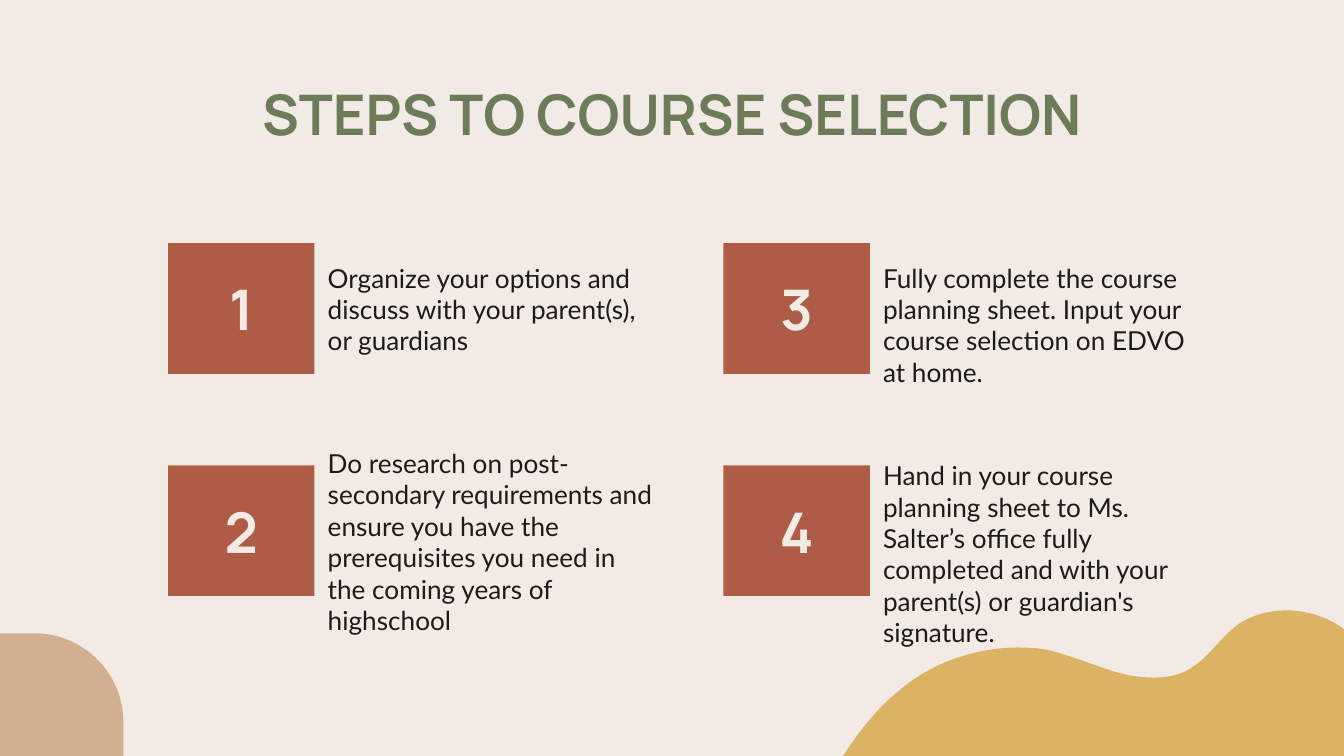
from pptx import Presentation
from pptx.dml.color import RGBColor
from pptx.enum.shapes import MSO_SHAPE
from pptx.enum.text import MSO_ANCHOR, PP_ALIGN
from pptx.oxml.ns import qn
from pptx.util import Pt

CREAM = RGBColor(0xF1, 0xEA, 0xE5)
TAN = RGBColor(0xD3, 0xAF, 0x92)
GOLD = RGBColor(0xDC, 0xB3, 0x64)
GREEN = RGBColor(0x6E, 0x7B, 0x59)
RUST = RGBColor(0xAF, 0x5C, 0x46)
INK = RGBColor(0x1F, 0x19, 0x1A)

RECT = MSO_SHAPE.RECTANGLE
TOP, MIDDLE = MSO_ANCHOR.TOP, MSO_ANCHOR.MIDDLE
LEFT, CENTER = PP_ALIGN.LEFT, PP_ALIGN.CENTER

HEADING = {"name": "Manrope", "size": Pt(30), "bold": True}
BODY = {"name": "Lato", "size": Pt(14), "bold": False}

STEPS = [
    ("1", "Organize your options and discuss with your parent(s), or guardians",
     2.9, 39.6),
    ("2", "Do research on post-secondary requirements and ensure you have the "
          "prerequisites you need in the coming years of highschool", -16.8, 147.6),
    ("3", "Fully complete the course planning sheet. Input your course selection "
          "on EDVO at home.", 2.9, 39.6),
    ("4", "Hand in your course planning sheet to Ms. Salter’s office fully completed "
          "and with your parent(s) or guardian's signature.", -10.3, 39.6),
]

WAVE_CURVES = [
    ((11, 65.5), (24.5, 48), (44, 35.3)),
    ((59, 25.7), (78.5, 19.9), (97.2, 19.9)),
    ((103, 19.9), (108.7, 20.2), (113.8, 21.3)),
    ((126, 24.3), (137.5, 29.3), (149.8, 33)),
    ((156.2, 35), (163.4, 36), (170, 36)),
    ((176.4, 36), (182.2, 35), (187.2, 32.6)),
    ((198.7, 26.6), (204.5, 15.8), (214.6, 8)),
    ((221.8, 2.9), (231, 0), (241.2, 0)),
    ((255, 0), (269.3, 5.8), (277.2, 15)),
]


def style_shape(sp, color):
    sp.shadow.inherit = False
    sp.fill.solid()
    sp.fill.fore_color.rgb = color
    sp.line.fill.background()


def add_outline(slide, left, top, start, segments, color):
    builder = slide.shapes.build_freeform(Pt(start[0]), Pt(start[1]))
    builder.add_line_segments(
        [(Pt(x), Pt(y)) for segment in segments for x, y in segment], close=True)
    sp = builder.convert_to_shape(Pt(left), Pt(top))
    style_shape(sp, color)
    lines = iter(list(sp._element.iter(qn("a:lnTo"))))
    for segment in segments:
        first, *others = [next(lines) for _ in segment]
        if others:
            first.tag = qn("a:cubicBezTo")
            for line in others:
                first.append(line[0])
                line.getparent().remove(line)


def write(sp, text, font, color, align, anchor):
    tf = sp.text_frame
    frame = {"word_wrap": True, "vertical_anchor": anchor}
    frame.update({f"margin_{side}": Pt(7.2) for side in ("left", "top", "right", "bottom")})
    for name, value in frame.items():
        setattr(tf, name, value)
    p = tf.paragraphs[0]
    p.alignment = align
    r = p.add_run()
    r.text = text
    for name, value in font.items():
        setattr(r.font, name, value)
    r.font.color.rgb = color


def add_corner(slide, left, top, size, radius):
    flat = size - radius
    bend = radius * 0.45
    arc = ((size - bend, 0), (size, bend), (size, radius))
    segments = [((flat, 0),), arc, ((size, size),), ((0, size),)]
    add_outline(slide, left, top, (0, 0), segments, TAN)


def add_wave(slide, left, top):
    add_outline(slide, left, top, (0, 84), WAVE_CURVES + [((275, 84),)], GOLD)


def add_title(slide, left, top, width, height):
    box = slide.shapes.add_textbox(Pt(left), Pt(top), Pt(width), Pt(height))
    write(box, "STEPS TO COURSE SELECTION", HEADING, GREEN, CENTER, TOP)


def add_step(slide, left, top, number, text, text_shift, text_height):
    width, height = 78.5, 70
    box = slide.shapes.add_textbox(
        Pt(left + width), Pt(top + text_shift), Pt(190), Pt(text_height))
    write(box, text, BODY, INK, LEFT, TOP)
    tile = slide.shapes.add_shape(RECT, Pt(left), Pt(top), Pt(width), Pt(height))
    style_shape(tile, RUST)
    write(tile, number, HEADING, CREAM, CENTER, MIDDLE)


def add_steps(slide, left, top, column_step, row_step):
    for i, step in enumerate(STEPS):
        column, row = divmod(i, 2)
        add_step(slide, left + column * column_step, top + row * row_step, *step)


def main():
    prs = Presentation()
    prs.slide_width, prs.slide_height = Pt(720), Pt(405)
    slide = prs.slides.add_slide(prs.slide_layouts[6])
    slide.background.fill.solid()
    slide.background.fill.fore_color.rgb = CREAM
    add_corner(slide, -0.9, 339.3, 67, 47.5)
    add_wave(slide, 448, 327)
    add_title(slide, 127.2, 35.5, 465.8, 37.4)
    add_steps(slide, 90, 130.3, 297.5, 119)
    prs.save("out.pptx")


if __name__ == "__main__":
    main()
